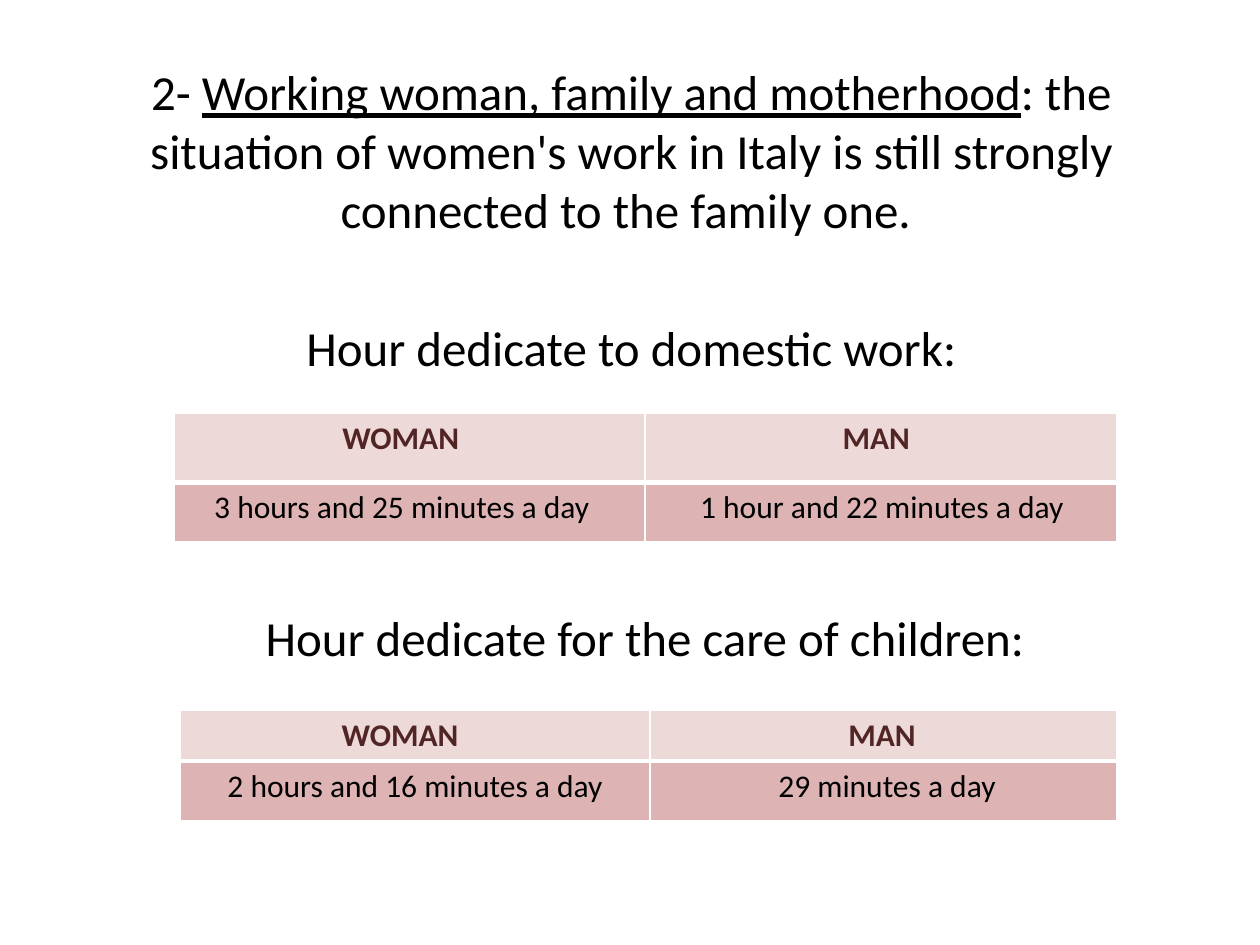
from lxml import etree
from pptx import Presentation
from pptx.dml.color import RGBColor
from pptx.enum.text import PP_ALIGN
from pptx.oxml.ns import qn
from pptx.util import Inches, Pt

CENTER = PP_ALIGN.CENTER
BLACK = RGBColor(0x00, 0x00, 0x00)
WINE = RGBColor(0x51, 0x25, 0x24)
PALE = RGBColor(0xEE, 0xD9, 0xD9)
ROSE = RGBColor(0xDD, 0xB4, 0xB3)
WHITE = RGBColor(0xFF, 0xFF, 0xFF)

BIG = {"size": Pt(28), "name": "Calibri", "bold": False}
HEAD = {"size": Pt(18), "name": "Calibri", "bold": True}
CELL = {"size": Pt(18), "name": "Calibri", "bold": False}


def add_run(para, text, style, color=BLACK, **extra):
    run = para.add_run()
    run.text = text
    for key, value in {**style, **extra}.items():
        setattr(run.font, key, value)
    run.font.color.rgb = color


def place(shape, box):
    for key, value in zip(("left", "top", "width", "height"), box):
        setattr(shape, key, Inches(value))


def add_intro(slide, box):
    """Fill the body placeholder with the topic and the first heading."""
    body = slide.placeholders[1]
    place(body, box)
    frame = body.text_frame
    topic, heading = frame.paragraphs[0], frame.add_paragraph()
    for para in (topic, heading):
        para.alignment = CENTER
        props = para._p.get_or_add_pPr()
        props.set("marL", "0")
        props.set("indent", "0")
        etree.SubElement(props, qn("a:buNone"))
    add_run(topic, "2- ", BIG)
    add_run(topic, "Working woman, family and motherhood", BIG, underline=True)
    add_run(topic, ": the situation of women's work in Italy is still "
                   "strongly connected to the family one. ", BIG)
    heading.space_before = Pt(45)
    add_run(heading, "Hour dedicate to domestic work:", BIG)


def add_heading(slide, box, text):
    frame = slide.shapes.add_textbox(*map(Inches, box)).text_frame
    frame.word_wrap = True
    add_run(frame.paragraphs[0], text, BIG)


def add_borders(cell, widths):
    """Draw white borders; widths maps a side (L, R, T, B) to points."""
    props = cell._tc.get_or_add_tcPr()
    for index, (side, width) in enumerate(widths.items()):
        line = etree.Element(qn(f"a:ln{side}"), w=str(Pt(width)))
        fill = etree.SubElement(line, qn("a:solidFill"))
        etree.SubElement(fill, qn("a:srgbClr"), val=str(WHITE))
        props.insert(index, line)


def add_hours(slide, box, cols, rows, cells):
    """Add a table; each cell is its text and its right margin."""
    table = slide.shapes.add_table(
        len(rows), len(cols), *map(Inches, box)).table
    for col, width in zip(table.columns, cols):
        col.width = Inches(width)
    looks = ((HEAD, WINE, PALE, {"T": 1, "B": 3}),
             (CELL, BLACK, ROSE, {"T": 3, "B": 1}))
    for r, (style, color, fill, edges) in enumerate(looks):
        table.rows[r].height = Inches(rows[r])
        for c, (text, margin) in enumerate(cells[r]):
            cell = table.cell(r, c)
            cell.margin_right = Inches(margin)
            cell.fill.solid()
            cell.fill.fore_color.rgb = fill
            add_borders(cell, {"L": 1, "R": 1, **edges})
            para = cell.text_frame.paragraphs[0]
            para.alignment = CENTER
            add_run(para, text, style, color)


def main():
    deck = Presentation()
    deck.slide_width, deck.slide_height = Inches(10), Inches(7.5)
    slide = deck.slides.add_slide(deck.slide_layouts[1])
    title = slide.shapes.title._element
    title.getparent().remove(title)

    add_intro(slide, (0.51, 0.44, 9, 5.17))
    add_hours(slide, (1.38, 3.28, 7.48, 1.02), (3.74, 3.74), (0.55, 0.47), (
        (("WOMAN", 0.24), ("MAN", 0.17)),
        (("3 hours and 25 minutes a day", 0.22),
         ("1 hour and 22 minutes a day", 0.08))))
    add_heading(slide, (2.01, 4.77, 6.54, 0.57),
                "Hour dedicate for the care of children:")
    add_hours(slide, (1.43, 5.64, 7.43, 0.87), (3.73, 3.7), (0.4, 0.47), (
        (("WOMAN", 0.34), ("MAN", 0.12)),
        (("2 hours and 16 minutes a day", 0.1),
         ("29 minutes a day", 0.04))))
    deck.save("out.pptx")


if __name__ == "__main__":
    main()
